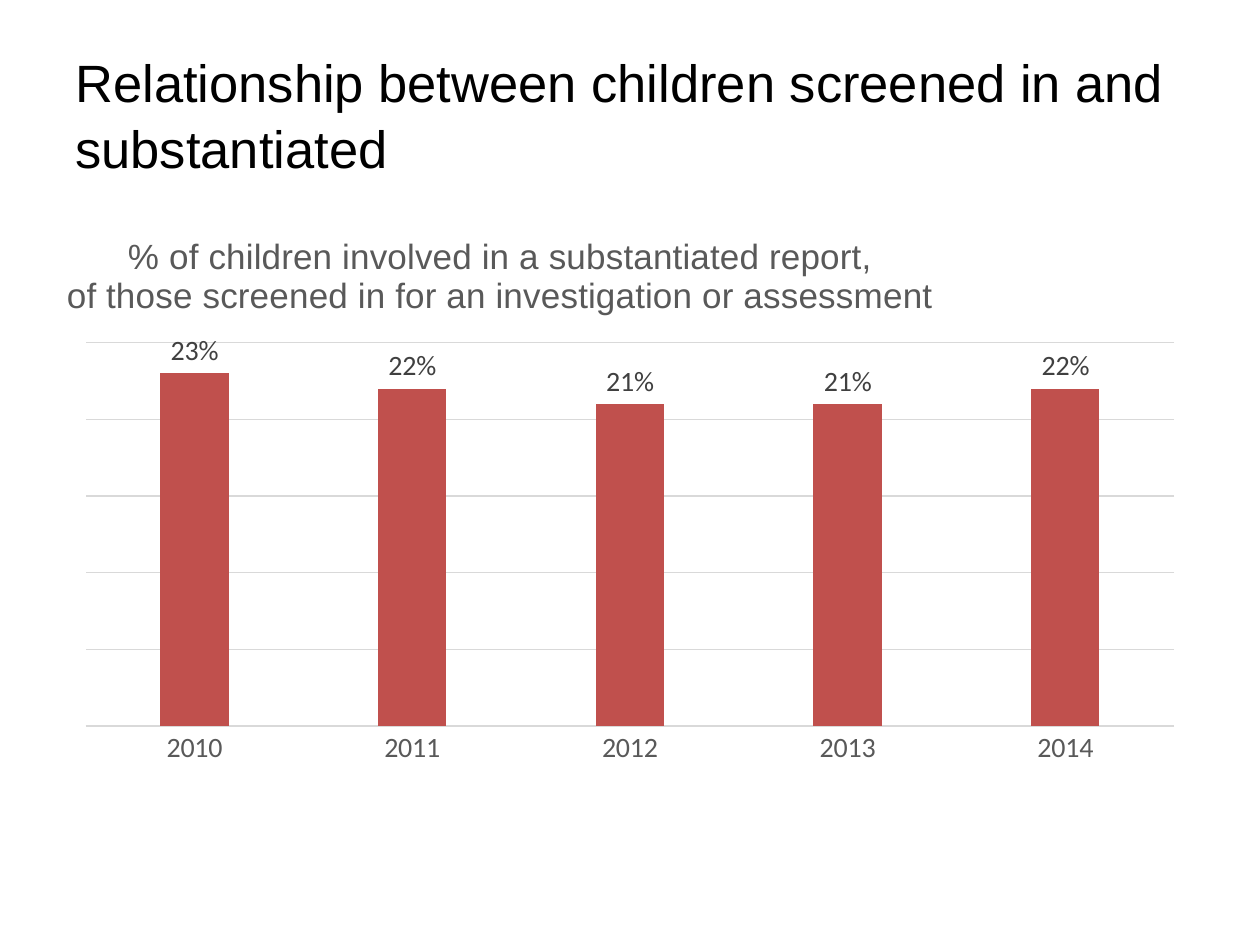
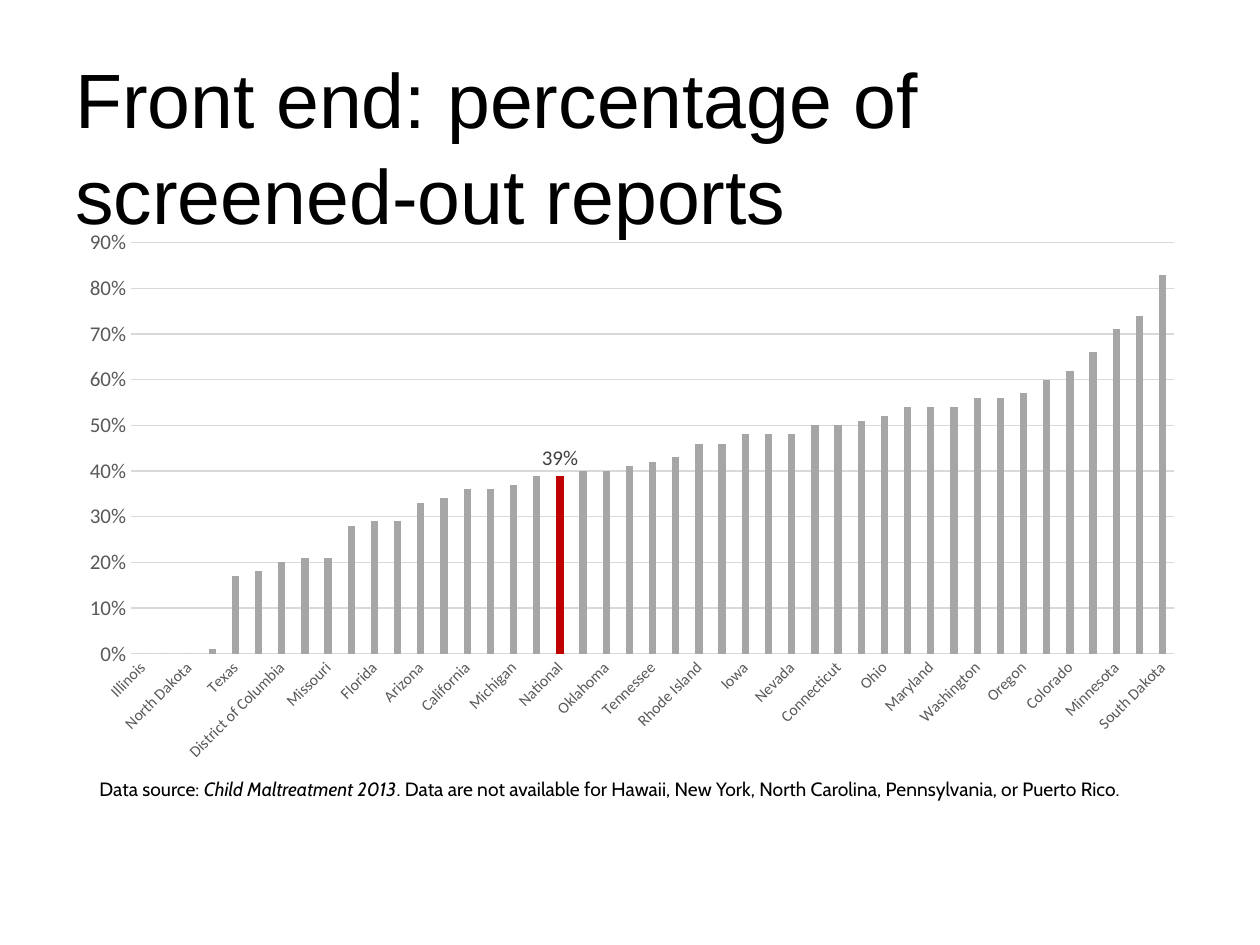
import pptx
import pptx.util
import pptx.oxml.ns
import pptx.chart.data
import pptx.dml.color
import pptx.enum.chart
import pptx.enum.text
import lxml.etree

# Shared look
WIDTH, HEIGHT = 10, 7.5
MARGIN = 0.05 * WIDTH
CONTENT_W = WIDTH - 2 * MARGIN
TITLE_TOP, TITLE_H = 0.33, 1.25
CHART_TOP, CHART_H = 1.75, 4.41
TITLE_FONT, CHART_FONT, NOTE_FONT = "Arial", "Calibri", "Cabin"
BLACK, AXIS_TEXT, LABEL_TEXT, GRID = "000000", "595959", "404040", "D9D9D9"
BRICK, GREY, RED = "C0504D", "A6A6A6", "C00000"

# Share of reports screened out, in percent, in rising order
SCREENED_OUT = {
    "Illinois": 0, "New Jersey": 0, "North Dakota": 0, "Alabama": 1,
    "Texas": 17, "South Carolina": 18, "District of Columbia": 20,
    "Mississippi": 21, "Missouri": 21, "Georgia": 28, "Florida": 29,
    "Kentucky": 29, "Arizona": 33, "Arkansas": 34, "California": 36,
    "New Hampshire": 36, "Michigan": 37, "Louisiana": 39, "National": 39,
    "Kansas": 40, "Oklahoma": 40, "Indiana": 41, "Tennessee": 42,
    "New Mexico": 43, "Rhode Island": 46, "Montana": 46, "Iowa": 48,
    "Utah": 48, "Nevada": 48, "Massachusetts": 50, "Connecticut": 50,
    "Maine": 51, "Ohio": 52, "Virginia": 54, "Maryland": 54, "Idaho": 54,
    "Washington": 56, "Alaska": 56, "Oregon": 57, "Delaware": 60,
    "Colorado": 62, "Nebraska": 66, "Minnesota": 71, "Vermont": 74,
    "South Dakota": 83,
}
SUBSTANTIATED = {"2010": 23, "2011": 22, "2012": 21, "2013": 21, "2014": 22}


def rgb(color):
    return pptx.dml.color.RGBColor.from_string(color)


def set_font(font, size, color, name=CHART_FONT):
    font.size = pptx.util.Pt(size)
    font.name = name
    font.bold = False
    font.color.rgb = rgb(color)


def set_line(line, color):
    line.color.rgb = rgb(color)
    line.width = pptx.util.Pt(0.75)


def add_text(slide, box, runs, size, font):
    """Place one paragraph; runs are (text, italic) pairs."""
    tf = slide.shapes.add_textbox(*map(pptx.util.Inches, box)).text_frame
    tf.word_wrap = True
    p = tf.paragraphs[0]
    for text, italic in runs:
        r = p.add_run()
        r.text = text
        set_font(r.font, size, BLACK, font)
        r.font.italic = italic
    return p


def add_title(slide, text, size):
    box = (MARGIN, TITLE_TOP, CONTENT_W, TITLE_H)
    add_text(slide, box, [(text, False)], size, TITLE_FONT).line_spacing = 1.04


def set_layout(parent, before, inner=False, **shares):
    """Fix a chart part at shares of the chart's size."""
    qn = pptx.oxml.ns.qn
    for old in parent.findall(qn("c:layout")):
        parent.remove(old)
    layout = lxml.etree.Element(qn("c:layout"))
    manual = lxml.etree.SubElement(layout, qn("c:manualLayout"))
    values = {"layoutTarget": "inner"} if inner else {}
    values |= {"xMode": "edge", "yMode": "edge"} | shares
    for tag, value in values.items():
        lxml.etree.SubElement(manual, qn("c:" + tag)).set("val", str(value))
    parent.find(qn(before)).addprevious(layout)


def add_columns(slide, percents, color, top_value, step, label_size, plot):
    data = pptx.chart.data.CategoryChartData(number_format="0%")
    data.categories = list(percents)
    data.add_series("Series 1", [v / 100 for v in percents.values()])
    box = (MARGIN, CHART_TOP, CONTENT_W, CHART_H)
    kind = pptx.enum.chart.XL_CHART_TYPE.COLUMN_CLUSTERED
    chart = slide.shapes.add_chart(kind, *map(pptx.util.Inches, box), data).chart
    set_font(chart.font, 10, BLACK)
    chart.has_legend = chart.has_title = False

    columns = chart.plots[0]
    columns.vary_by_categories = False
    columns.gap_width, columns.overlap = 219, -27
    fill = columns.series[0].format.fill
    fill.solid()
    fill.fore_color.rgb = rgb(color)

    cat, val = chart.category_axis, chart.value_axis
    for axis in (cat, val):
        axis.major_tick_mark = pptx.enum.chart.XL_TICK_MARK.NONE
    set_font(cat.tick_labels.font, label_size, AXIS_TEXT)
    set_line(cat.format.line, GRID)
    val.minimum_scale, val.maximum_scale, val.major_unit = 0, top_value, step
    val.has_major_gridlines = True
    set_line(val.major_gridlines.format.line, GRID)
    val.format.line.fill.background()
    set_font(val.tick_labels.font, 12, AXIS_TEXT)
    val.tick_labels.number_format = "0%"
    val.tick_labels.number_format_is_linked = False

    x, y, w, h = plot
    plot_area = chart._chartSpace.chart.plotArea
    set_layout(plot_area, "c:barChart", inner=True, x=x, y=y, w=w, h=h)
    return chart


def show_values(labels, size):
    labels.show_value = True
    labels.number_format = "0%"
    labels.number_format_is_linked = False
    labels.position = pptx.enum.chart.XL_LABEL_POSITION.OUTSIDE_END
    set_font(labels.font, size, LABEL_TEXT)


def add_chart_title(chart, lines, x, y):
    chart.has_title = True
    tf = chart.chart_title.text_frame
    for i, line in enumerate(lines):
        p = tf.add_paragraph() if i else tf.paragraphs[0]
        p.alignment = pptx.enum.text.PP_ALIGN.CENTER
        r = p.add_run()
        r.text = line
        set_font(r.font, 20, AXIS_TEXT, TITLE_FONT)
    set_layout(chart.chart_title._element, "c:overlay", x=x, y=y)


def highlight(chart, index, color):
    """Recolour one column and show its value."""
    point = chart.plots[0].series[0].points[index]
    point.format.fill.solid()
    point.format.fill.fore_color.rgb = rgb(color)
    label = point.data_label
    set_font(label.font, 12, LABEL_TEXT)
    label.position = pptx.enum.chart.XL_LABEL_POSITION.OUTSIDE_END


def build_substantiated(slide):
    add_title(slide, "Relationship between children screened in and substantiated", 30)
    chart = add_columns(slide, SUBSTANTIATED, BRICK, 0.25, 0.05, 16,
                        (0.02, 0.22, 0.96, 0.69))
    chart.value_axis.visible = False
    show_values(chart.plots[0].series[0].data_labels, 16)
    add_chart_title(chart, ["% of children involved in a substantiated report,",
                            "of those screened in for an investigation or assessment"],
                    0.0, 0.02)


def build_screened_out(slide):
    add_title(slide, "Front end: percentage of screened-out reports", 44)
    chart = add_columns(slide, SCREENED_OUT, GREY, 0.9, 0.1, 9,
                        (0.06, 0.04, 0.92, 0.74))
    # Slant the state names
    body = chart.category_axis._element.find(".//" + pptx.oxml.ns.qn("a:bodyPr"))
    body.set("rot", "-2700000")
    highlight(chart, list(SCREENED_OUT).index("National"), RED)
    add_text(slide, (0.69, 6.12, 8.34, 0.47), [
        ("Data source: ", False),
        ("Child Maltreatment 2013", True),
        (". Data are not available for Hawaii, New York, North Carolina, "
         "Pennsylvania, or Puerto Rico.", False),
    ], 11, NOTE_FONT)


def main():
    prs = pptx.Presentation()
    prs.slide_width = pptx.util.Inches(WIDTH)
    prs.slide_height = pptx.util.Inches(HEIGHT)
    for build in (build_substantiated, build_screened_out):
        build(prs.slides.add_slide(prs.slide_layouts[6]))
    prs.save("out.pptx")


if __name__ == "__main__":
    main()
